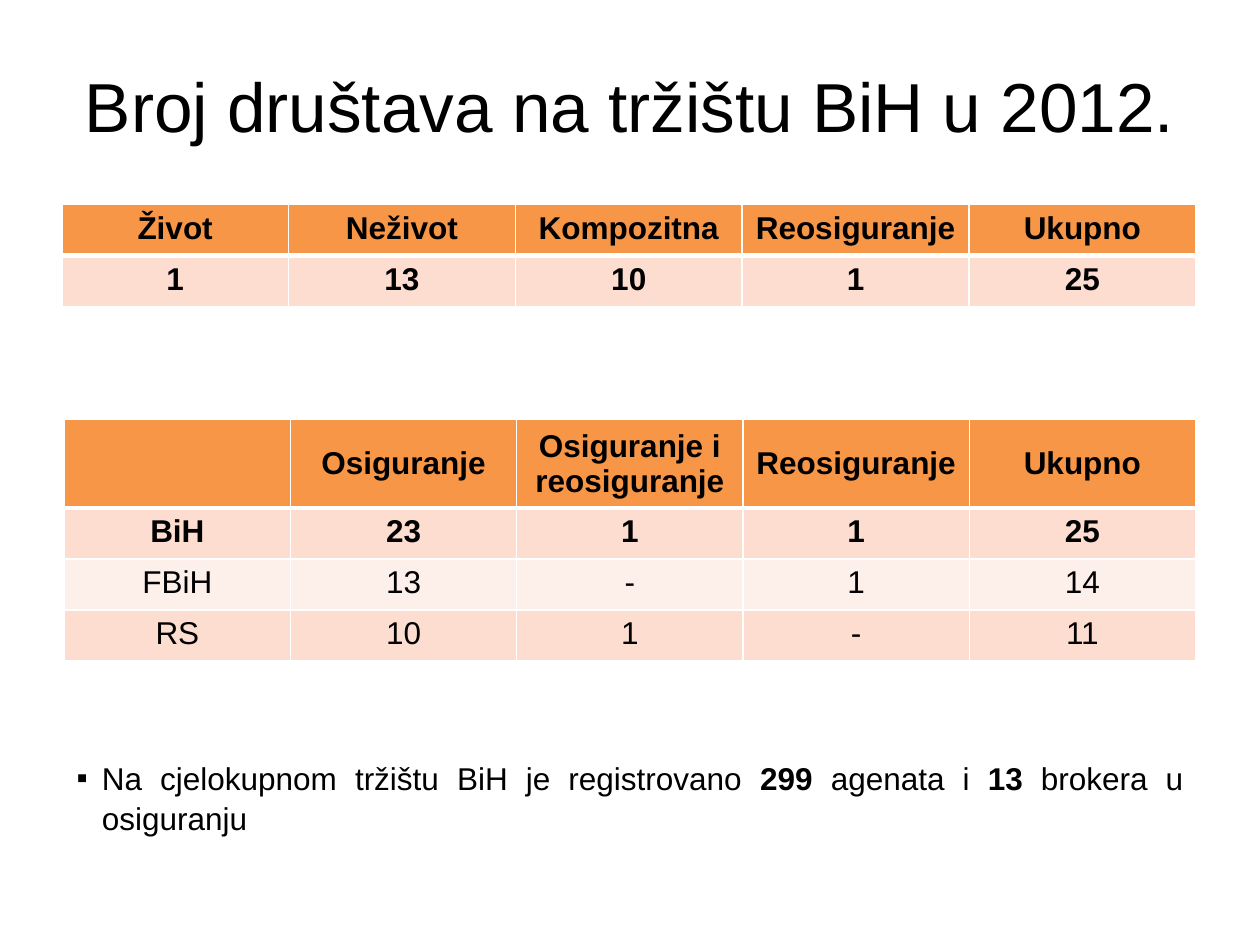
from pptx import Presentation
from pptx.dml.color import RGBColor
from pptx.enum.text import MSO_ANCHOR, PP_ALIGN
from pptx.oxml.ns import qn
from pptx.util import Inches, Pt
from lxml.etree import SubElement

THEME = {
    "font": "Arial",
    "title": 39.6,
    "body": 18,
    "text": "000000",
    "header": "F79646",
    "bands": ["FCDDCF", "FDEFE9"],
    "border": "FFFFFF",
}

TITLE = "Broj društava na tržištu BiH u 2012."

TABLES = [
    {
        "at": (0.49, 1.62, 9),
        "header_height": 0.41,
        "header_anchor": MSO_ANCHOR.TOP,
        "rows": [
            ["Život", "Neživot", "Kompozitna", "Reosiguranje", "Ukupno"],
            ["1", "13", "10", "1", "25"],
        ],
    },
    {
        "at": (0.51, 3.33, 8.98),
        "header_height": 0.7,
        "header_anchor": MSO_ANCHOR.MIDDLE,
        "rows": [
            ["", "Osiguranje", "Osiguranje i reosiguranje", "Reosiguranje", "Ukupno"],
            ["BiH", "23", "1", "1", "25"],
            ["FBiH", "13", "-", "1", "14"],
            ["RS", "10", "1", "-", "11"],
        ],
    },
]
ROW_HEIGHT = 0.405
BOLD_ROWS = 2

NOTE = [
    ("Na cjelokupnom tržištu BiH je registrovano ", False),
    ("299", True),
    (" agenata i ", False),
    ("13", True),
    (" brokera u osiguranju", False),
]


def add_span(para, text, size, bold=False):
    span = para.add_run()
    span.text = text
    span.font.name = THEME["font"]
    span.font.size = Pt(size)
    span.font.bold = bold
    span.font.color.rgb = RGBColor.from_string(THEME["text"])


def add_box(page, left, top, width, height, anchor):
    box = page.shapes.add_textbox(Inches(left), Inches(top), Inches(width), Inches(height))
    box.text_frame.word_wrap = True
    box.text_frame.vertical_anchor = anchor
    return box.text_frame.paragraphs[0]


def set_borders(cell, widths):
    properties = cell._tc.get_or_add_tcPr()
    for position, (side, width) in enumerate(widths.items()):
        line = properties.makeelement(qn(f"a:{side}"), {"w": str(Pt(width))})
        fill = SubElement(line, qn("a:solidFill"))
        SubElement(fill, qn("a:srgbClr"), val=THEME["border"])
        properties.insert(position, line)


def add_grid(page, content):
    rows = content["rows"]
    left, top, width = content["at"]
    heights = [content["header_height"]] + [ROW_HEIGHT] * (len(rows) - 1)
    frame = page.shapes.add_table(
        len(rows), len(rows[0]), Inches(left), Inches(top), Inches(width), Inches(sum(heights))
    )
    grid = frame.table
    for column in grid.columns:
        column.width = Inches(width / len(rows[0]))
    for r, values in enumerate(rows):
        grid.rows[r].height = Inches(heights[r])
        color = THEME["bands"][(r - 1) % 2] if r else THEME["header"]
        widths = {"lnL": 1, "lnR": 1, "lnT": 3 if r == 1 else 1, "lnB": 1 if r else 3}
        for c, value in enumerate(values):
            cell = grid.cell(r, c)
            cell.fill.solid()
            cell.fill.fore_color.rgb = RGBColor.from_string(color)
            cell.vertical_anchor = MSO_ANCHOR.TOP if r else content["header_anchor"]
            set_borders(cell, widths)
            para = cell.text_frame.paragraphs[0]
            para.alignment = PP_ALIGN.CENTER
            if value:
                add_span(para, value, THEME["body"], r < BOLD_ROWS)


def add_note(page):
    para = add_box(page, 0.51, 5.95, 8.98, 0.71, MSO_ANCHOR.TOP)
    para.alignment = PP_ALIGN.JUSTIFY
    para.line_spacing = 1.07
    properties = para._p.get_or_add_pPr()
    properties.set("marL", str(Inches(0.2)))
    properties.set("indent", str(Inches(-0.2)))
    SubElement(properties, qn("a:buFont"), typeface=THEME["font"])
    SubElement(properties, qn("a:buChar"), char="▪")
    for text, bold in NOTE:
        add_span(para, text, THEME["body"], bold)


def main():
    deck = Presentation()
    deck.slide_width, deck.slide_height = Inches(10), Inches(7.5)
    page = deck.slides.add_slide(deck.slide_layouts[6])
    title = add_box(page, 0.5, 0.21, 9, 1.25, MSO_ANCHOR.MIDDLE)
    title.alignment = PP_ALIGN.CENTER
    add_span(title, TITLE, THEME["title"])
    for content in TABLES:
        add_grid(page, content)
    add_note(page)
    deck.save("out.pptx")


if __name__ == "__main__":
    main()
